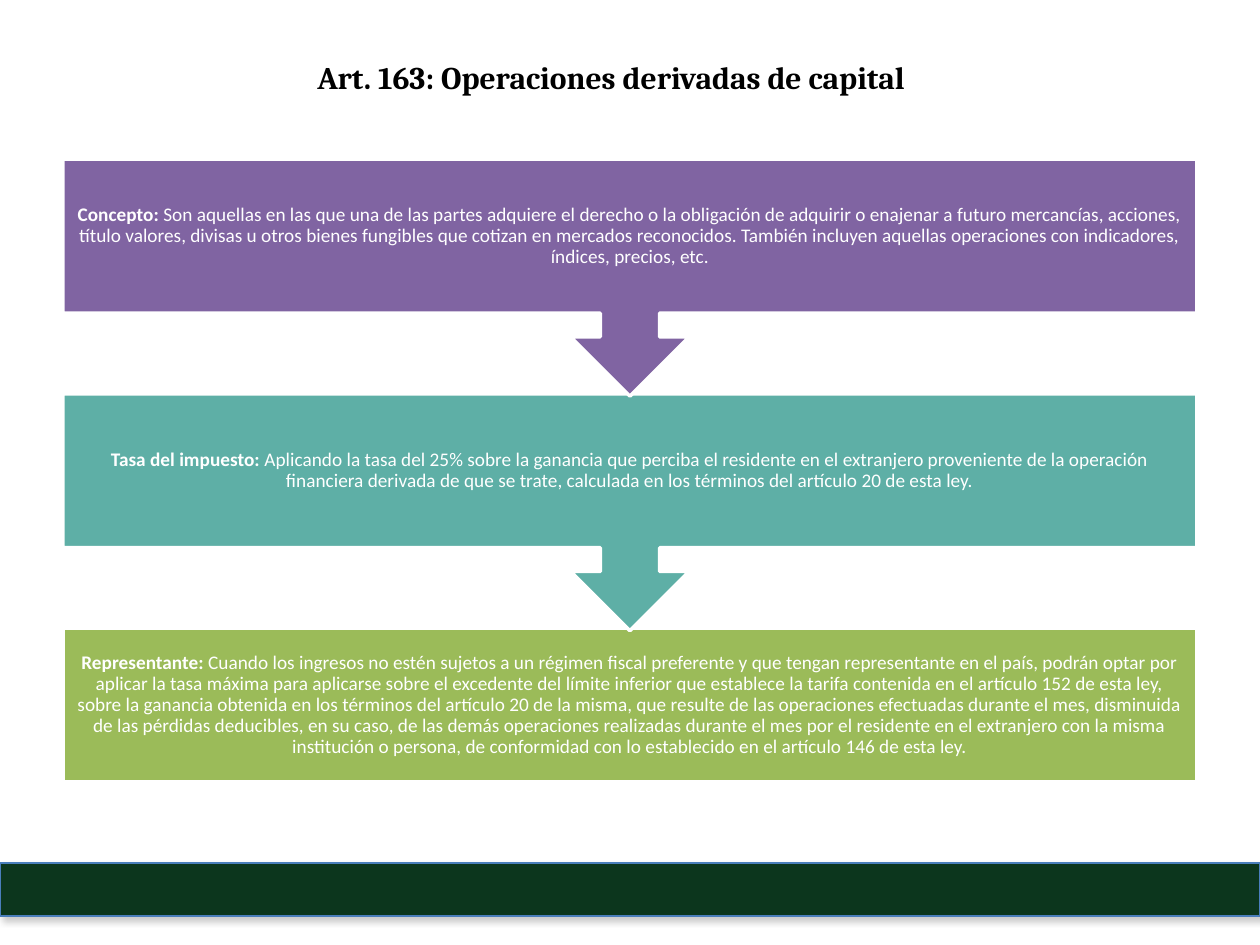
from lxml import etree
from pptx import Presentation
from pptx.dml.color import RGBColor
from pptx.enum.shapes import MSO_SHAPE
from pptx.enum.text import MSO_ANCHOR, PP_ALIGN
from pptx.oxml.ns import qn
from pptx.util import Pt

WHITE = RGBColor(0xFF, 0xFF, 0xFF)
BLACK = RGBColor(0, 0, 0)
PURPLE = RGBColor(0x80, 0x64, 0xA2)
TEAL = RGBColor(0x5E, 0xAF, 0xA6)
GREEN = RGBColor(0x9B, 0xBB, 0x59)
DARK_GREEN = RGBColor(0x0C, 0x36, 0x1D)
BLUE = RGBColor(0x4A, 0x7E, 0xBB)

TITLE = "Art. 163: Operaciones derivadas de capital"
STEPS = [
    ("Concepto:",
     "Son aquellas en las que una de las partes adquiere el derecho o la obligación de "
     "adquirir o enajenar a futuro mercancías, acciones, título valores, divisas u otros "
     "bienes fungibles que cotizan en mercados reconocidos. También incluyen aquellas "
     "operaciones con indicadores, índices, precios, etc.", PURPLE),
    ("Tasa del impuesto:",
     "Aplicando la tasa del 25% sobre la ganancia que perciba el residente en el extranjero "
     "proveniente de la operación financiera derivada de que se trate, calculada en los "
     "términos del artículo 20 de esta ley.", TEAL),
    ("Representante:",
     "Cuando los ingresos no estén sujetos a un régimen fiscal preferente y que tengan "
     "representante en el país, podrán optar por aplicar la tasa máxima para aplicarse sobre "
     "el excedente del límite inferior que establece la tarifa contenida en el artículo 152 "
     "de esta ley, sobre la ganancia obtenida en los términos del artículo 20 de la misma, "
     "que resulte de las operaciones efectuadas durante el mes, disminuida de las pérdidas "
     "deducibles, en su caso, de las demás operaciones realizadas durante el mes por el "
     "residente en el extranjero con la misma institución o persona, de conformidad con lo "
     "establecido en el artículo 146 de esta ley.", GREEN),
]
STEP_LEFT, STEP_TOP, STEP_WIDTH = 36, 91, 648
STEP_PITCH, BOX_HEIGHT, CALLOUT_HEIGHT = 134, 88, 135.4
BOX_FRAME = {"word_wrap": True, "vertical_anchor": MSO_ANCHOR.MIDDLE,
             "margin_left": Pt(6.2), "margin_right": Pt(6.2),
             "margin_top": Pt(6.2), "margin_bottom": Pt(6.2)}


def set_attributes(target, values):
    for name, value in values.items():
        setattr(target, name, value)


def add_block(slide, kind, box, fill, line, line_width):
    block = slide.shapes.add_shape(kind, *map(Pt, box))
    block.shadow.inherit = False
    block.fill.solid()
    block.fill.fore_color.rgb = fill
    block.line.color.rgb = line
    block.line.width = Pt(line_width)
    return block


def add_run(paragraph, text, font, size, color, bold):
    run = paragraph.add_run()
    run.text = text
    set_attributes(run.font, {"name": font, "size": Pt(size), "bold": bold})
    run.font.color.rgb = color


def add_footer_bar(slide):
    bar = add_block(slide, MSO_SHAPE.RECTANGLE, (0, 493.2, 720, 30.2), DARK_GREEN, BLUE, 0.75)
    effects = bar._element.spPr.find(qn("a:effectLst"))
    shadow = etree.SubElement(effects, qn("a:outerShdw"), blurRad=str(Pt(4)),
                              dist=str(Pt(3)), dir="2700000", rotWithShape="0")
    tint = etree.SubElement(shadow, qn("a:srgbClr"), val="808080")
    etree.SubElement(tint, qn("a:alpha"), val="40000")


def add_step(slide, index):
    label, body, color = STEPS[index]
    is_last = index == len(STEPS) - 1
    kind = MSO_SHAPE.RECTANGLE if is_last else MSO_SHAPE.DOWN_ARROW_CALLOUT
    height = BOX_HEIGHT if is_last else CALLOUT_HEIGHT
    top = STEP_TOP + index * STEP_PITCH
    step = add_block(slide, kind, (STEP_LEFT, top, STEP_WIDTH, height), color, WHITE, 2)
    set_attributes(step.text_frame, BOX_FRAME)
    paragraph = step.text_frame.paragraphs[0]
    set_attributes(paragraph, {"alignment": PP_ALIGN.CENTER, "line_spacing": 0.9})
    add_run(paragraph, label + " ", "Calibri", 11, WHITE, True)
    add_run(paragraph, body, "Calibri", 11, WHITE, False)


def add_title(slide):
    title = slide.shapes.add_textbox(*map(Pt, (26, 29.5, 646.5, 29)))
    title.text_frame.word_wrap = True
    paragraph = title.text_frame.paragraphs[0]
    paragraph.alignment = PP_ALIGN.CENTER
    add_run(paragraph, TITLE, "Cambria", 18, BLACK, True)


def main():
    deck = Presentation()
    set_attributes(deck, {"slide_width": Pt(720), "slide_height": Pt(540)})
    slide = deck.slides.add_slide(deck.slide_layouts[6])
    add_footer_bar(slide)
    # Each arrow tip overlaps the next box, so the steps stack from last to first.
    for index in reversed(range(len(STEPS))):
        add_step(slide, index)
    add_title(slide)
    deck.save("out.pptx")


if __name__ == "__main__":
    main()
